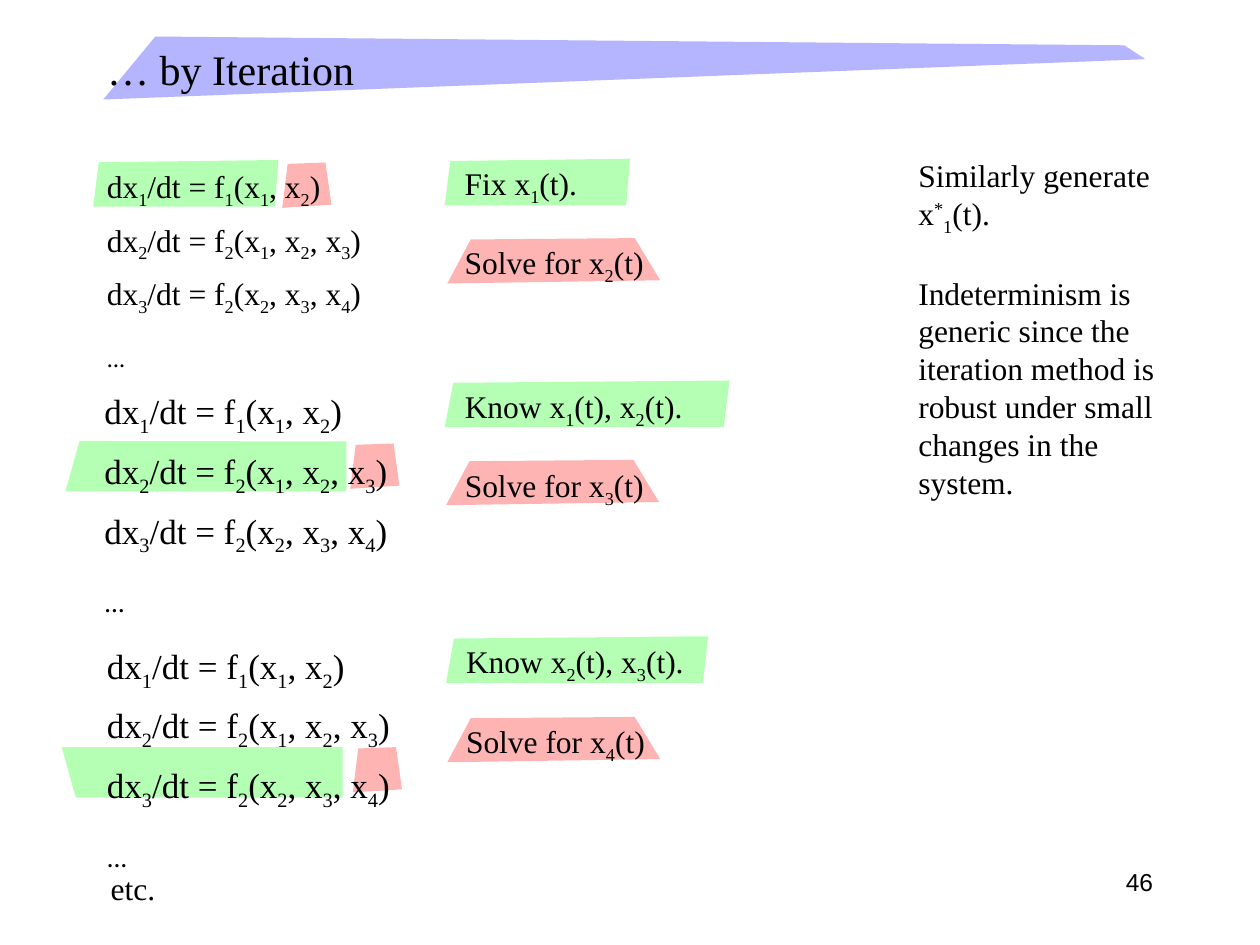
from pptx import Presentation
from pptx.dml.color import RGBColor
from pptx.enum.text import MSO_ANCHOR, PP_ALIGN
from pptx.util import Inches, Pt

LEFT, RIGHT = PP_ALIGN.LEFT, PP_ALIGN.RIGHT
TOP, MIDDLE = MSO_ANCHOR.TOP, MSO_ANCHOR.MIDDLE
BLACK = RGBColor(0x00, 0x00, 0x00)
GREEN = RGBColor(0xB4, 0xFF, 0xB4)
RED = RGBColor(0xFF, 0xB4, 0xB4)
BLUE = RGBColor(0xB4, 0xB4, 0xFF)
SERIF, SANS = "Times New Roman", "Arial"
BASELINES = {"_": "-25000", "^": "30000"}

# Outlines as fractions of the box they fill
BANNER = [(0.05, 0), (0.98, 0.14), (1, 0.36), (0, 1)]
TAG = [(0.03, 0.05), (1, 0), (0.98, 1), (0, 1)]
TRAPEZOID = [(0.11, 0.03), (0.88, 0), (1, 0.93), (0, 1)]
SLANT_UP = [(1, 1), (0, 1), (0.05, 0), (1, 0.01)]
SLANT_DOWN = [(1, 0), (0, 0), (0.05, 1), (1, 1)]

EQUATIONS = [
    "dx_1/dt = f_1(x_1, x_2)",
    "dx_2/dt = f_2(x_1, x_2, x_3)",
    "dx_3/dt = f_2(x_2, x_3, x_4)",
    "_…",
]

STEPS = [
    {
        "equations": (0.75, 1.19, 2.6, 1.6), "size": 18,
        "notes": (3.59, 1.25, 1.63, 1.3),
        "lines": ["Fix x_1(t).", "Solve for x_2(t)"],
        "highlights": [
            (TAG, GREEN, (0.74, 1.27, 1.47, 0.37)),
            (TAG, GREEN, (3.53, 1.26, 1.47, 0.37)),
            (TRAPEZOID, RED, (2.24, 1.29, 0.39, 0.36)),
            (TRAPEZOID, RED, (3.55, 1.89, 1.69, 0.36)),
        ],
    },
    {
        "equations": (0.73, 2.95, 2.6, 1.6), "size": 20,
        "notes": (3.59, 3.02, 1.95, 1.3),
        "lines": ["Know x_1(t), x_2(t).", "Solve for x_3(t)"],
        "highlights": [
            (SLANT_UP, GREEN, (0.52, 3.5, 2.23, 0.4)),
            (TAG, GREEN, (3.53, 3.02, 2.26, 0.37)),
            (TRAPEZOID, RED, (2.78, 3.52, 0.39, 0.36)),
            (TRAPEZOID, RED, (3.54, 3.65, 1.69, 0.36)),
        ],
    },
    {
        "equations": (0.75, 4.97, 2.6, 1.6), "size": 20,
        "notes": (3.6, 5.05, 1.95, 1.3),
        "lines": ["Know x_2(t), x_3(t).", "Solve for x_4(t)"],
        "highlights": [
            (SLANT_DOWN, GREEN, (0.49, 5.93, 2.23, 0.4)),
            (TAG, GREEN, (3.54, 5.05, 2.08, 0.37)),
            (TRAPEZOID, RED, (2.8, 5.93, 0.39, 0.36)),
            (TRAPEZOID, RED, (3.55, 5.69, 1.69, 0.36)),
        ],
    },
]


def add_run(paragraph, text, size, font, baseline=None):
    run = paragraph.add_run()
    run.text = text
    for name, value in {"size": Pt(size), "name": font, "bold": text == "…"}.items():
        setattr(run.font, name, value)
    run.font.color.rgb = BLACK
    if baseline:
        run.font._element.set("baseline", baseline)


def write_marked_text(paragraph, text, size, font):
    """Write text in which _ lowers and ^ raises the one character that follows."""
    plain = ""
    characters = iter(text)
    for character in characters:
        if character not in BASELINES:
            plain += character
            continue
        if plain:
            add_run(paragraph, plain, size, font)
        plain = ""
        add_run(paragraph, next(characters), size, font, BASELINES[character])
    if plain:
        add_run(paragraph, plain, size, font)


def fill_text(shape, lines, size=18, font=SERIF, wrap=True, anchor=TOP, **paragraph_format):
    frame = shape.text_frame
    frame.word_wrap = wrap
    frame.vertical_anchor = anchor
    for index, line in enumerate(lines):
        paragraph = frame.paragraphs[0] if index == 0 else frame.add_paragraph()
        for name, value in paragraph_format.items():
            if index or name != "space_before":
                setattr(paragraph, name, value)
        write_marked_text(paragraph, line, size, font)


def add_text(slide, box, lines, **text_format):
    shape = slide.shapes.add_textbox(*map(Inches, box))
    fill_text(shape, lines, **text_format)


def add_outline(slide, corners, color, box):
    left, top, width, height = box
    points = [(Inches(left + x * width), Inches(top + y * height)) for x, y in corners]
    builder = slide.shapes.build_freeform(*points[0])
    builder.add_line_segments(points[1:], close=True)
    shape = builder.convert_to_shape()
    shape.shadow.inherit = False
    shape.fill.solid()
    shape.fill.fore_color.rgb = color
    shape.line.fill.background()
    return shape


def add_title(slide, box):
    title = slide.shapes.title
    for name, value in zip(("left", "top", "width", "height"), box):
        setattr(title, name, Inches(value))
    fill_text(title, ["… by Iteration"], size=24, anchor=MIDDLE, alignment=LEFT)
    banner = add_outline(slide, BANNER, BLUE, (0.82, 0.29, 8.27, 0.5))
    title.element.addprevious(banner.element)


def add_step(slide, step):
    """Place the equations of one iteration, its notes and their highlights."""
    for corners, color, box in step["highlights"]:
        add_outline(slide, corners, color, box)
    add_text(slide, step["equations"], EQUATIONS, size=step["size"], line_spacing=1.25)
    add_text(slide, step["notes"], step["lines"], wrap=False, space_before=Pt(21))


def main():
    presentation = Presentation()
    presentation.slide_width, presentation.slide_height = Inches(10), Inches(7.5)
    slide = presentation.slides.add_slide(presentation.slide_layouts[5])
    add_title(slide, (0.75, 0.25, 7.75, 0.59))
    for step in STEPS:
        add_step(slide, step)
    add_text(slide, (0.78, 6.85, 0.56, 0.4), ["etc."], wrap=False)
    conclusion = [
        "Similarly generate x^*_1(t).",
        "Indeterminism is generic since the iteration method is robust "
        "under small changes in the system.",
    ]
    add_text(slide, (7.19, 1.19, 2.26, 2.8), conclusion, space_before=Pt(21))
    add_text(slide, (7.17, 6.83, 2.08, 0.5), ["46"], size=14, font=SANS, alignment=RIGHT)
    presentation.save("out.pptx")


if __name__ == "__main__":
    main()
